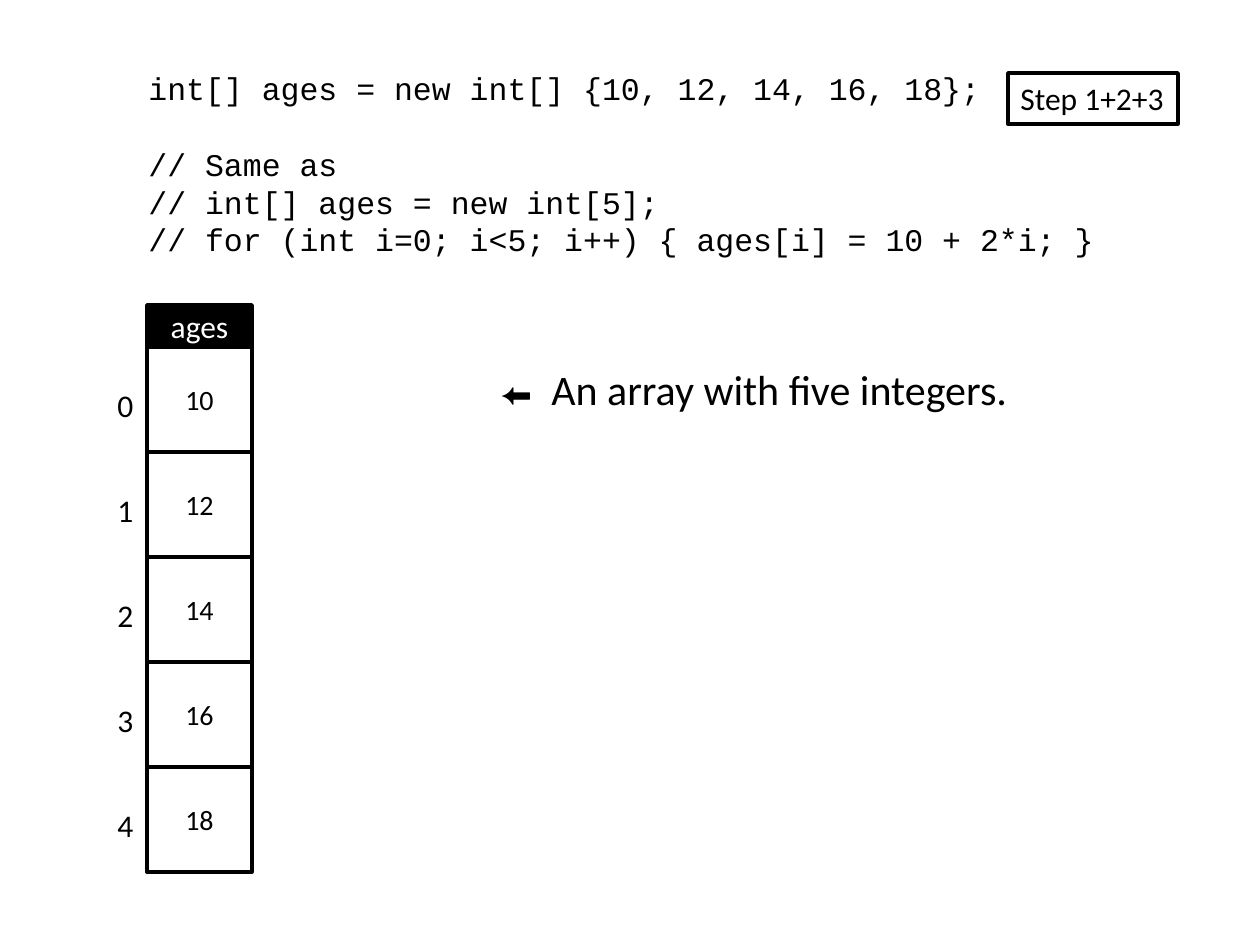
from lxml import etree
from pptx import Presentation
from pptx.dml.color import RGBColor
from pptx.enum import shapes, text
from pptx.oxml import ns
from pptx.util import Emu, Pt

PX = 914400 // 126
COLORS = {"ink": "000000", "paper": "FFFFFF"}
BODY, CODE = "Calibri", "Courier New"

CODE_LINES = [
    "int[] ages = new int[] {10, 12, 14, 16, 18};",
    "// Same as",
    "// int[] ages = new int[5];",
    "// for (int i=0; i<5; i++) { ages[i] = 10 + 2*i; }",
]
AGES = [10, 12, 14, 16, 18]


def px(*lengths):
    return [Emu(length * PX) for length in lengths]


def color(name):
    return RGBColor.from_string(COLORS[name])


def style(para, size, font=BODY, ink="ink"):
    para.font.size = Pt(size)
    para.font.name = font
    para.font.color.rgb = color(ink)


def fit(shape):
    shape.text_frame.word_wrap = False
    shape.text_frame.auto_size = text.MSO_AUTO_SIZE.SHAPE_TO_FIT_TEXT


def add_label(page, box, lines, size=18, font=BODY):
    label = page.shapes.add_textbox(*px(*box))
    fit(label)
    label.text_frame.text = "\n".join(lines)
    for para in label.text_frame.paragraphs:
        style(para, size, font)
    return label


def add_cell(page, box, words, size, fill="paper", ink="ink"):
    cell = page.shapes.add_shape(shapes.MSO_SHAPE.RECTANGLE, *px(*box))
    cell.shadow.inherit = False
    cell.fill.solid()
    cell.fill.fore_color.rgb = color(fill)
    cell.line.color.rgb = color("ink")
    cell.line.width = Pt(2)
    cell.text_frame.text = words
    cell.text_frame.vertical_anchor = text.MSO_ANCHOR.MIDDLE
    para = cell.text_frame.paragraphs[0]
    para.alignment = text.PP_ALIGN.CENTER
    style(para, size, ink=ink)
    return cell


def add_code(page, box):
    label = add_label(page, box, CODE_LINES, font=CODE)
    # One line of space sets the comment apart
    label.text_frame.paragraphs[1].space_before = Pt(21.6)


def add_step(page, box):
    step = add_cell(page, box, "Step 1+2+3", 18)
    step.text_frame.vertical_anchor = text.MSO_ANCHOR.TOP
    step.text_frame.paragraphs[0].alignment = text.PP_ALIGN.LEFT
    fit(step)


def add_array(page, box, name, values):
    left, top, width, height = box
    header, index_width, index_height = 42, 42, 50
    side = (height - header) // len(values)
    for index, value in enumerate(values):
        y = top + header + index * side
        add_cell(page, (left, y, width, side), str(value), 16)
        add_label(page, (left - index_width, y + 33, index_width, index_height),
                  [str(index)])
    add_cell(page, (left, top, width, header), name, 18, "ink", "paper")


def add_remark(page, box):
    remark = add_label(page, box, ["⬅"])
    para = remark.text_frame.paragraphs[0]
    span = para.add_run()
    span.text = "\tAn array with five integers."
    span.font.size = Pt(24)
    # A tab stop holds the gap after the arrow; it precedes the font defaults
    stops = etree.Element(ns.qn("a:tabLst"))
    etree.SubElement(stops, ns.qn("a:tab"), pos=str(51 * PX), algn="l")
    para._p.get_or_add_pPr().insert(0, stops)


def main():
    deck = Presentation()
    deck.slide_width, deck.slide_height = px(1260, 945)
    page = deck.slides.add_slide(deck.slide_layouts[6])
    add_code(page, (136, 63, 975, 204))
    add_array(page, (147, 305, 105, 567), "ages", AGES)
    add_step(page, (1008, 73, 170, 51))
    add_remark(page, (488, 357, 539, 63))
    deck.save("out.pptx")


if __name__ == "__main__":
    main()
